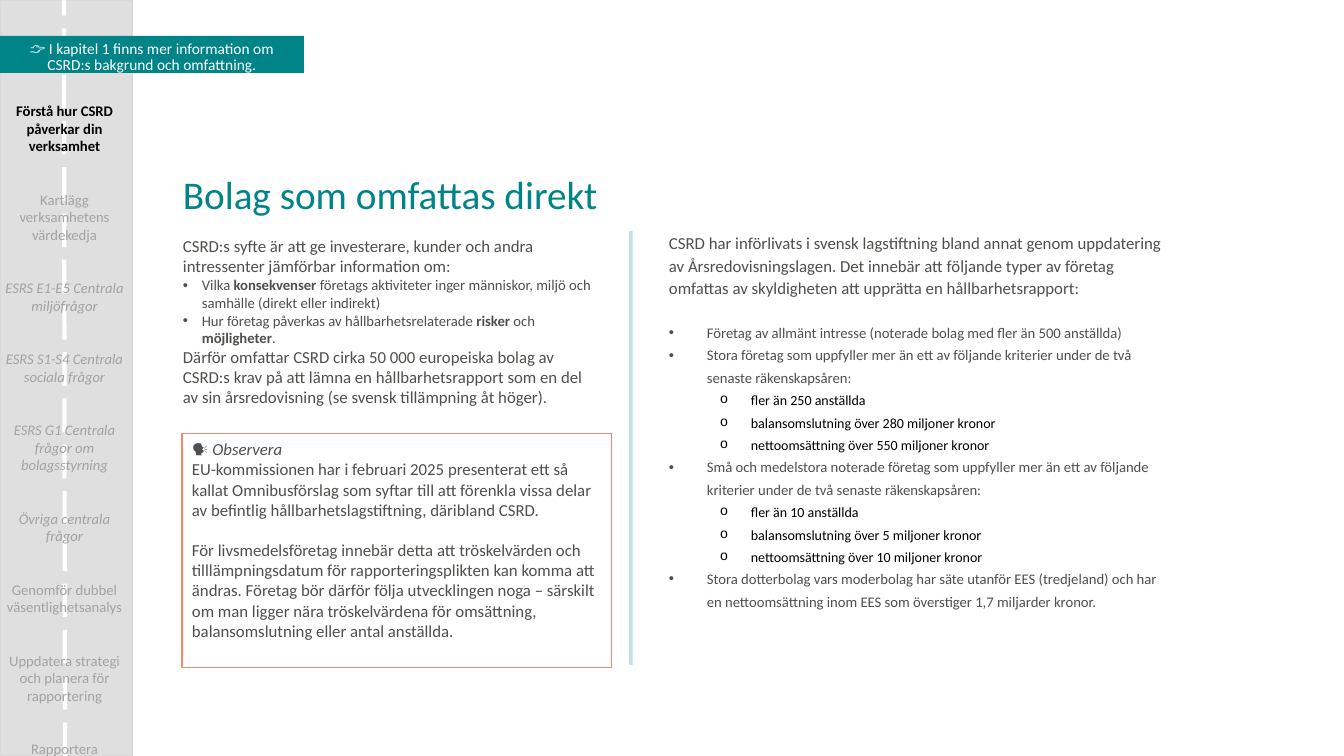
from lxml.etree import SubElement
from pptx import Presentation
from pptx.dml.color import RGBColor
from pptx.enum.dml import MSO_LINE
from pptx.enum.shapes import MSO_CONNECTOR, MSO_SHAPE
from pptx.enum.text import MSO_ANCHOR, PP_ALIGN
from pptx.oxml.ns import qn
from pptx.util import Emu, Pt

PX = 914400 / 100.8
TEAL, GREY, BLACK, WHITE = "008487", "4F4F4C", "000000", "FFFFFF"
FADED, ORANGE = "A3A3A3", "F28969"
rgb = RGBColor.from_string


def place(box, kind=None, fill=None, line=None, line_width=1, **frame_format):
    """Add a text box or a preset shape at a px box and return its text frame."""
    box = [Emu(round(v * PX)) for v in box]
    if kind is None:
        frame = slide.shapes.add_textbox(*box).text_frame
    else:
        shape = slide.shapes.add_shape(kind, *box)
        shape.shadow.inherit = False
        if fill:
            shape.fill.solid()
            shape.fill.fore_color.rgb = rgb(fill)
        else:
            shape.fill.background()
        if line:
            shape.line.color.rgb = rgb(line)
            shape.line.width = Pt(line_width)
        else:
            shape.line.fill.background()
        frame = shape.text_frame
    frame.word_wrap = True
    frame.vertical_anchor = MSO_ANCHOR.TOP
    for name, value in frame_format.items():
        setattr(frame, name, value)
    return frame


def write(frame, text, size, color, bullet=None, emphasis="bold", italic=False,
          bold=False, align=PP_ALIGN.LEFT, **paragraph_format):
    """Add a paragraph; parts between asterisks get the emphasis."""
    first = frame.paragraphs[0]
    paragraph = frame.add_paragraph() if first.runs else first
    paragraph.alignment = align
    for name, value in paragraph_format.items():
        setattr(paragraph, name, value)
    if bullet:
        char, font, margin, hanging = bullet
        props = paragraph._p.get_or_add_pPr()
        props.set("marL", str(round(margin * PX)))
        props.set("indent", str(round(-hanging * PX)))
        SubElement(props, qn("a:buFont"), typeface=font)
        SubElement(props, qn("a:buChar"), char=char)
    for i, part in enumerate(text.split("*")):
        if part:
            run = paragraph.add_run()
            run.text = part
            style = {"name": "Calibri", "size": Pt(size), "bold": bold, "italic": italic}
            if i % 2:
                style[emphasis] = True
            for name, value in style.items():
                setattr(run.font, name, value)
            run.font.color.rgb = rgb(color)


deck = Presentation()
deck.slide_width, deck.slide_height = Emu(round(1344 * PX)), Emu(round(756 * PX))
slide = deck.slides.add_slide(deck.slide_layouts[6])

# Road along the left edge, its dashed centre line and the column divider
place((0, 0, 132, 756), MSO_SHAPE.RECTANGLE, "DFDFDF", "D9D9D9")
for ends, color, width, dash, alpha in [
    ((65, 756, 64, 0), WHITE, 3, MSO_LINE.LONG_DASH, 100),
    ((631, 231, 631, 665), TEAL, 2.5, MSO_LINE.SOLID, 23),
]:
    rule = slide.shapes.add_connector(
        MSO_CONNECTOR.STRAIGHT, *[Emu(round(v * PX)) for v in ends])
    rule.line.color.rgb = rgb(color)
    rule.line.width = Pt(width)
    rule.line.dash_style = dash
    if alpha < 100:
        srgb = rule.line._ln.find(".//" + qn("a:srgbClr"))
        SubElement(srgb, qn("a:alpha"), val=str(alpha * 1000))
    SubElement(rule._element.spPr, qn("a:effectLst"))

# Steps on the road, the current one first
steps = place((0, 97, 129, 659), margin_left=Emu(round(3 * PX)),
              margin_right=Emu(round(3 * PX)))
write(steps, "Förstå hur CSRD påverkar din verksamhet", 10.5, BLACK,
      bold=True, align=PP_ALIGN.CENTER)
for step, italic in [
    ("Kartlägg verksamhetens värdekedja", False),
    ("ESRS E1-E5 Centrala miljöfrågor", True),
    ("ESRS S1-S4 Centrala sociala frågor", True),
    ("ESRS G1 Centrala frågor om bolagsstyrning", True),
    ("Övriga centrala frågor", True),
    ("Genomför dubbel väsentlighetsanalys", False),
    ("Uppdatera strategi och planera för rapportering", False),
    ("Rapportera", False),
]:
    write(steps, step, 10.5, FADED, italic=italic, align=PP_ALIGN.CENTER,
          space_before=Pt(25.5))

# Title
title = place((173, 157, 798, 80), vertical_anchor=MSO_ANCHOR.MIDDLE,
              margin_top=0, margin_bottom=0)
write(title, "Bolag som omfattas direkt", 28, TEAL, line_spacing=0.9)

# Purpose of CSRD
purpose = place((173, 231, 438, 204))
purpose_bullet = ("•", "Arial", 19, 19)
for text, size, bullet in [
    ("CSRD:s syfte är att ge investerare, kunder och andra intressenter "
     "jämförbar information om:", 12, None),
    ("Vilka *konsekvenser* företags aktiviteter inger människor, miljö och "
     "samhälle (direkt eller indirekt)", 10.5, purpose_bullet),
    ("Hur företag påverkas av hållbarhetsrelaterade *risker* och *möjligheter*.",
     10.5, purpose_bullet),
    ("Därför omfattar CSRD cirka 50 000 europeiska bolag av CSRD:s krav på att "
     "lämna en hållbarhetsrapport som en del av sin årsredovisning (se svensk "
     "tillämpning åt höger).", 12, None),
]:
    write(purpose, text, size, GREY, bullet)

# Chapter pointer
pointer = place((0, 36, 304, 37), MSO_SHAPE.RECTANGLE, TEAL)
write(pointer, "👉 I kapitel 1 finns mer information om CSRD:s bakgrund och omfattning.",
      11, WHITE, align=PP_ALIGN.CENTER, line_spacing=0.9)

# Companies covered in Swedish law
covered = place((659, 226, 523, 391))
write(covered, "CSRD har införlivats i svensk lagstiftning bland annat genom uppdatering "
      "av Årsredovisningslagen. Det innebär att följande typer av företag omfattas av "
      "skyldigheten att upprätta en hållbarhetsrapport:", 12, GREY,
      line_spacing=Pt(16), space_after=Pt(15))
for company, criteria in [
    ("Företag av allmänt intresse (noterade bolag med fler än 500 anställda)", []),
    ("Stora företag som uppfyller mer än ett av följande kriterier under de två "
     "senaste räkenskapsåren:",
     ["fler än 250 anställda", "balansomslutning över 280 miljoner kronor",
      "nettoomsättning över 550 miljoner kronor"]),
    ("Små och medelstora noterade företag som uppfyller mer än ett av följande "
     "kriterier under de två senaste räkenskapsåren:",
     ["fler än 10 anställda", "balansomslutning över 5 miljoner kronor",
      "nettoomsättning över 10 miljoner kronor"]),
    ("Stora dotterbolag vars moderbolag har säte utanför EES (tredjeland) och har "
     "en nettoomsättning inom EES som överstiger 1,7 miljarder kronor.", []),
]:
    write(covered, company, 10.5, GREY, ("•", "Arial", 38, 38), line_spacing=Pt(16))
    for criterion in criteria:
        write(covered, criterion, 10, BLACK, ("o", "Courier New", 82, 31),
              level=1, line_spacing=Pt(16))

# Notice about the Omnibus proposal
notice = place((182, 434, 430, 234), MSO_SHAPE.RECTANGLE, None, ORANGE, 0.75)
write(notice, "🗣️* Observera*", 12, GREY, emphasis="italic")
write(notice, "EU-kommissionen har i februari 2025 presenterat ett så kallat "
      "Omnibusförslag som syftar till att förenkla vissa delar av befintlig "
      "hållbarhetslagstiftning, däribland CSRD.", 12, GREY)
write(notice, "För livsmedelsföretag innebär detta att tröskelvärden och "
      "tilllämpningsdatum för rapporteringsplikten kan komma att ändras. Företag bör "
      "därför följa utvecklingen noga – särskilt om man ligger nära tröskelvärdena för "
      "omsättning, balansomslutning eller antal anställda.", 12, GREY,
      space_before=Pt(14.5))

deck.save("out.pptx")
